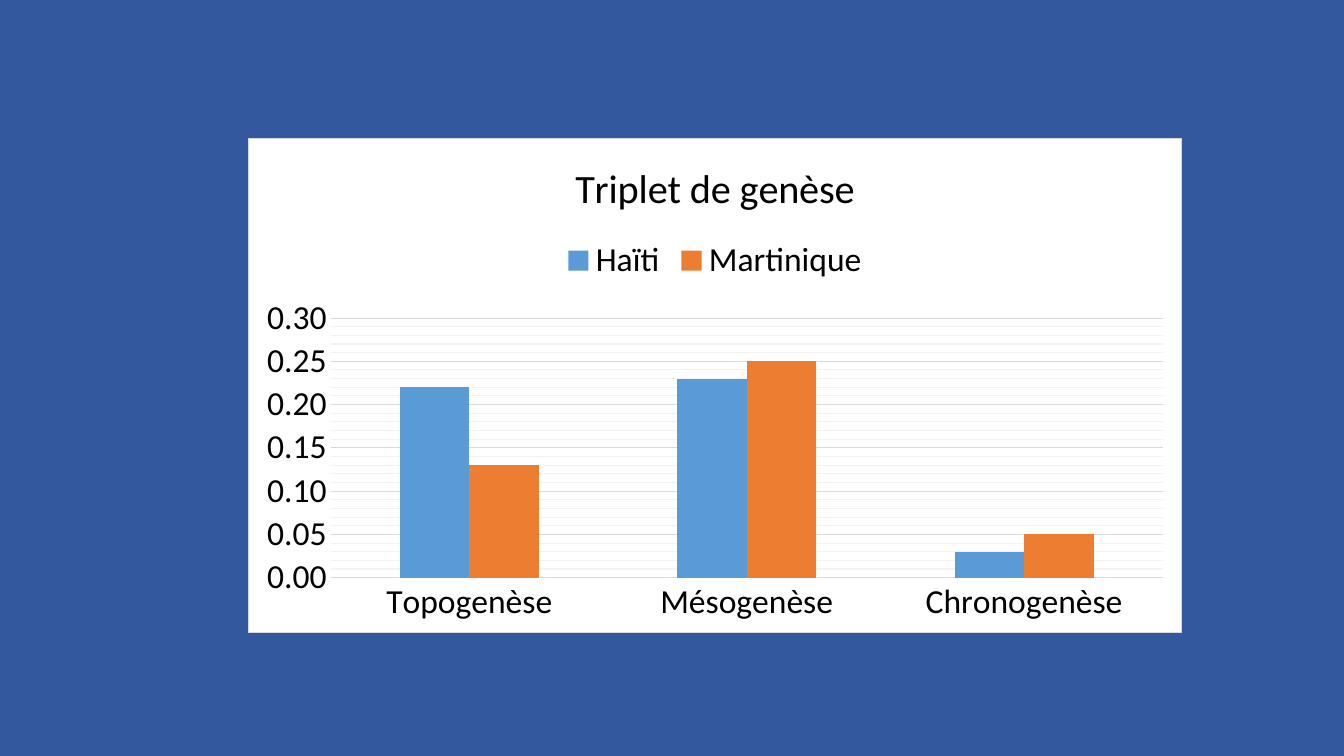
import pptx
import pptx.chart.data
import pptx.dml.color
import pptx.enum.chart
import pptx.oxml
import pptx.oxml.ns
import pptx.util
from dataclasses import dataclass

PX = 914400 / 100.8


@dataclass(frozen=True)
class Theme:
    background: str = "34589D"
    panel: str = "FFFFFF"
    text: str = "000000"
    rule: str = "D9D9D9"
    minor_rule: str = "F2F2F2"
    haiti: str = "5B9BD5"
    martinique: str = "ED7D31"
    font: str = "Calibri"
    title_size: float = 28.8
    body_size: float = 24
    line_width: float = 0.75


THEME = Theme()
CATEGORIES = ["Topogenèse", "Mésogenèse", "Chronogenèse"]
SERIES = [
    ("Haïti", [22, 23, 3], THEME.haiti),
    ("Martinique", [13, 25, 5], THEME.martinique),
]
HUNDREDTHS = '0"."00'


def px(n):
    return pptx.util.Emu(round(n * PX))


def rgb(color):
    return pptx.dml.color.RGBColor.from_string(color)


def fill_solid(fill, color):
    fill.solid()
    fill.fore_color.rgb = rgb(color)


def style_line(line, color):
    fill_solid(line.fill, color)
    line.width = pptx.util.Pt(THEME.line_width)


def style_font(font, size=THEME.body_size, color=THEME.text, bold=False):
    font.name = THEME.font
    font.size = pptx.util.Pt(size)
    font.bold = bold
    font.color.rgb = rgb(color)


def write_text(tf, text, **style):
    p = tf.paragraphs[0]
    r = p.add_run()
    r.text = text
    style_font(r.font, **style)


def chart_format(line, fill=None):
    """Build the XML for a chart part's line and optional fill."""
    def solid(color):
        return f'<a:solidFill><a:srgbClr val="{color}"/></a:solidFill>'

    width = int(pptx.util.Pt(THEME.line_width))
    return pptx.oxml.parse_xml(
        f'<c:spPr {pptx.oxml.ns.nsdecls("c", "a")}>'
        f'{solid(fill) if fill else ""}'
        f'<a:ln w="{width}">{solid(line)}</a:ln></c:spPr>'
    )


def style_axes(chart):
    category, value = chart.category_axis, chart.value_axis
    for axis in (category, value):
        axis.major_tick_mark = pptx.enum.chart.XL_TICK_MARK.NONE
        axis.minor_tick_mark = pptx.enum.chart.XL_TICK_MARK.NONE
        style_font(axis.tick_labels.font)
    style_line(category.format.line, THEME.rule)

    value.minimum_scale, value.maximum_scale = 0, 30
    value.major_unit, value.minor_unit = 5, 1
    value.has_major_gridlines = value.has_minor_gridlines = True
    style_line(value.major_gridlines.format.line, THEME.rule)
    minor = value._element.find(pptx.oxml.ns.qn("c:minorGridlines"))
    minor.append(chart_format(THEME.minor_rule))
    value.format.line.fill.background()
    value.tick_labels.number_format = HUNDREDTHS
    value.tick_labels.number_format_is_linked = False


def add_column_chart(s, title, left, top, width, height):
    data = pptx.chart.data.CategoryChartData(number_format=HUNDREDTHS)
    data.categories = CATEGORIES
    for name, values, _ in SERIES:
        data.add_series(name, values)
    chart = s.shapes.add_chart(
        pptx.enum.chart.XL_CHART_TYPE.COLUMN_CLUSTERED,
        px(left), px(top), px(width), px(height), data,
    ).chart
    style_font(chart.font)
    chart._chartSpace.chart.addnext(chart_format(THEME.rule, THEME.panel))

    # Title and legend
    chart.has_title = True
    write_text(chart.chart_title.text_frame, title, size=THEME.title_size)
    chart.has_legend = True
    chart.legend.position = pptx.enum.chart.XL_LEGEND_POSITION.TOP
    chart.legend.include_in_layout = False
    style_font(chart.legend.font)

    # Columns
    plot = chart.plots[0]
    plot.vary_by_categories = False
    plot.gap_width = 199
    for series, (_, _, color) in zip(plot.series, SERIES):
        fill_solid(series.format.fill, color)
    style_axes(chart)


def main():
    prs = pptx.Presentation()
    prs.slide_width, prs.slide_height = px(1344), px(756)
    s = prs.slides.add_slide(prs.slide_layouts[6])
    fill_solid(s.background.fill, THEME.background)
    add_column_chart(s, "Triplet de genèse", 248, 138, 934, 495)
    prs.save("out.pptx")


if __name__ == "__main__":
    main()
